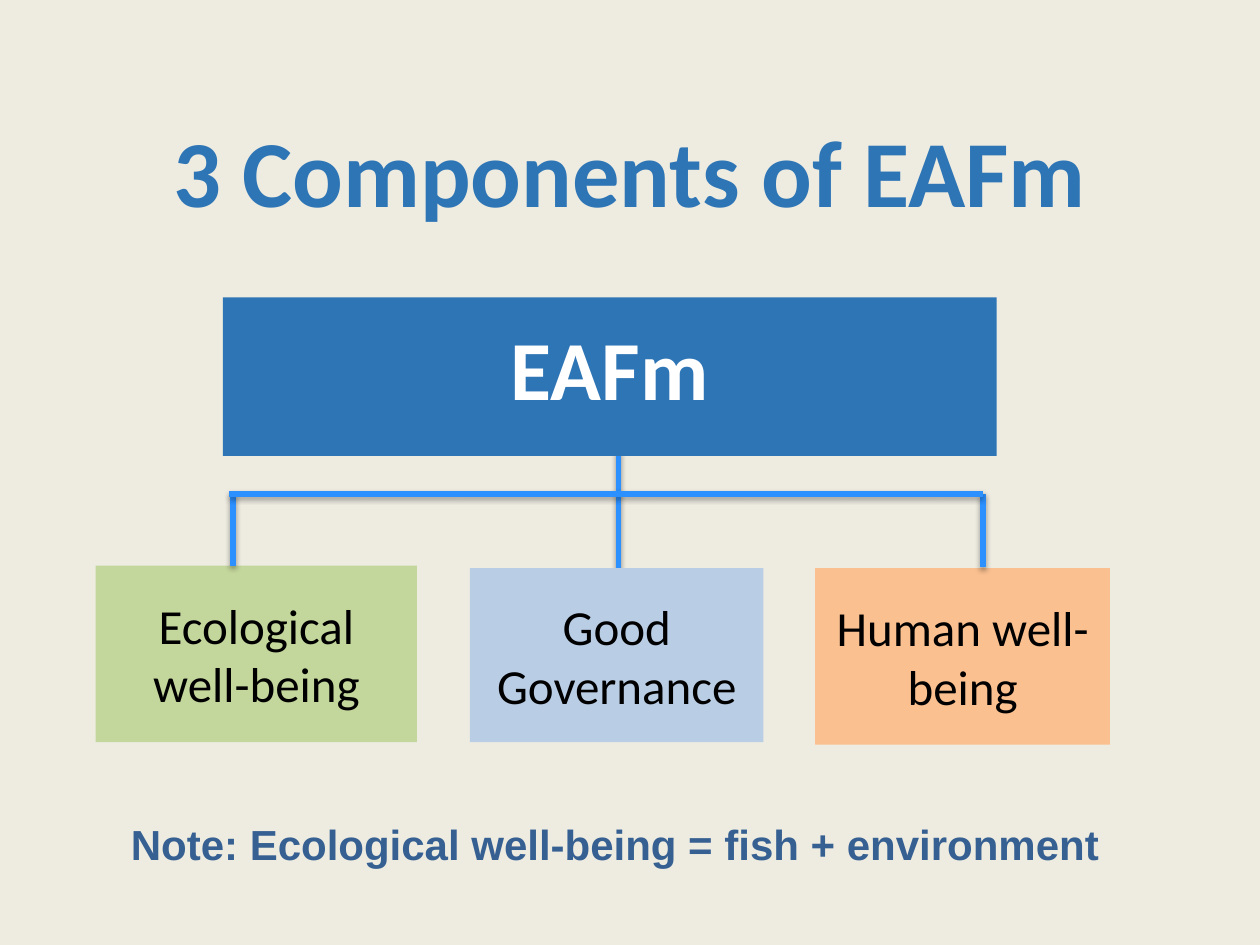
from lxml.etree import SubElement
from pptx import Presentation
from pptx.dml.color import RGBColor
from pptx.enum.shapes import MSO_CONNECTOR, MSO_SHAPE
from pptx.enum.text import MSO_ANCHOR as Anchor, PP_ALIGN as Align
from pptx.oxml.ns import qn
from pptx.util import Pt

EMU_PER_PX = 9144
BACKGROUND = RGBColor(0xEE, 0xEC, 0xE1)
BLUE = RGBColor(0x2E, 0x75, 0xB6)
LINE_BLUE = RGBColor(0x2C, 0x90, 0xFF)
NOTE_BLUE = RGBColor(0x37, 0x60, 0x92)
GREEN = RGBColor(0xC3, 0xD6, 0x9B)
PALE_BLUE = RGBColor(0xB9, 0xCD, 0xE5)
ORANGE = RGBColor(0xFA, 0xC0, 0x90)
WHITE = RGBColor(0xFF, 0xFF, 0xFF)
BLACK = RGBColor(0, 0, 0)

COMPONENTS = [
    ("Ecological well-being", (76, 449, 255, 140), GREEN),
    ("Good Governance", (373, 451, 233, 138), PALE_BLUE),
    ("Human well-being", (647, 451, 234, 140), ORANGE),
]
BAR_TOP = 392
BAR_LEFT, BAR_RIGHT = 182, 780
BRANCHES = [(185, 391, 449), (780, BAR_TOP, 450)]
TRUNK = (491, 358, 471)


def px(*lengths):
    """Turn pixel lengths into EMU."""
    return [length * EMU_PER_PX for length in lengths]


def set_text(shape, text, size, color, font="Calibri", bold=False, align=Align.CENTER,
             anchor=Anchor.MIDDLE, wrap=True, line_spacing=None, space_after=None):
    """Write one formatted paragraph into a shape."""
    frame = shape.text_frame
    frame.word_wrap = wrap
    frame.vertical_anchor = anchor
    paragraph = frame.paragraphs[0]
    paragraph.alignment = align
    paragraph.line_spacing = line_spacing
    paragraph.space_after = space_after
    run = paragraph.add_run()
    run.text = text
    run.font.name = font
    run.font.size = Pt(size)
    run.font.bold = bold
    run.font.color.rgb = color


def add_label(slide, box, text, **style):
    """Add a text box."""
    shape = slide.shapes.add_textbox(*px(*box))
    set_text(shape, text, anchor=Anchor.TOP, bold=True, **style)


def add_block(slide, box, text, fill, **style):
    """Add a filled rectangle with centred text."""
    shape = slide.shapes.add_shape(MSO_SHAPE.RECTANGLE, *px(*box))
    shape.shadow.inherit = False
    shape.fill.solid()
    shape.fill.fore_color.rgb = fill
    shape.line.fill.background()
    set_text(shape, text, **style)


def add_line(slide, start, end, width=3.25):
    """Add a straight line with a soft shadow below it."""
    line = slide.shapes.add_connector(MSO_CONNECTOR.STRAIGHT, *px(*start, *end))
    line.line.color.rgb = LINE_BLUE
    line.line.width = Pt(width)
    effects = SubElement(line._element.spPr, qn("a:effectLst"))
    shadow = SubElement(effects, qn("a:outerShdw"), blurRad=str(Pt(3.1)),
                        dist=str(Pt(1.6)), dir="5400000", rotWithShape="0")
    color = SubElement(shadow, qn("a:srgbClr"), val=str(BLACK))
    SubElement(color, qn("a:alpha"), val="38000")


def add_vertical(slide, x, top, bottom):
    """Add a vertical line of the tree."""
    add_line(slide, (x, top), (x, bottom))


def main():
    """Build the slide and save it."""
    presentation = Presentation()
    presentation.slide_width, presentation.slide_height = px(1000, 750)
    slide = presentation.slides.add_slide(presentation.slide_layouts[6])
    slide.background.fill.solid()
    slide.background.fill.fore_color.rgb = BACKGROUND

    add_vertical(slide, *TRUNK)
    add_label(slide, (78, 85, 844, 98), "3 Components of EAFm", size=54, color=BLUE)
    add_block(slide, (177, 236, 614, 126), "EAFm", BLUE, size=48, color=WHITE,
              bold=True, line_spacing=0.8, space_after=Pt(6))
    for text, box, fill in COMPONENTS:
        add_block(slide, box, text, fill, size=28, color=BLACK)
    for branch in BRANCHES:
        add_vertical(slide, *branch)
    add_line(slide, (BAR_LEFT, BAR_TOP), (BAR_RIGHT, BAR_TOP), width=3)
    add_label(slide, (94, 645, 795, 50), "Note: Ecological well-being = fish + environment",
              size=24, color=NOTE_BLUE, font="Arial", align=Align.LEFT, wrap=False)
    presentation.save("out.pptx")


if __name__ == "__main__":
    main()
